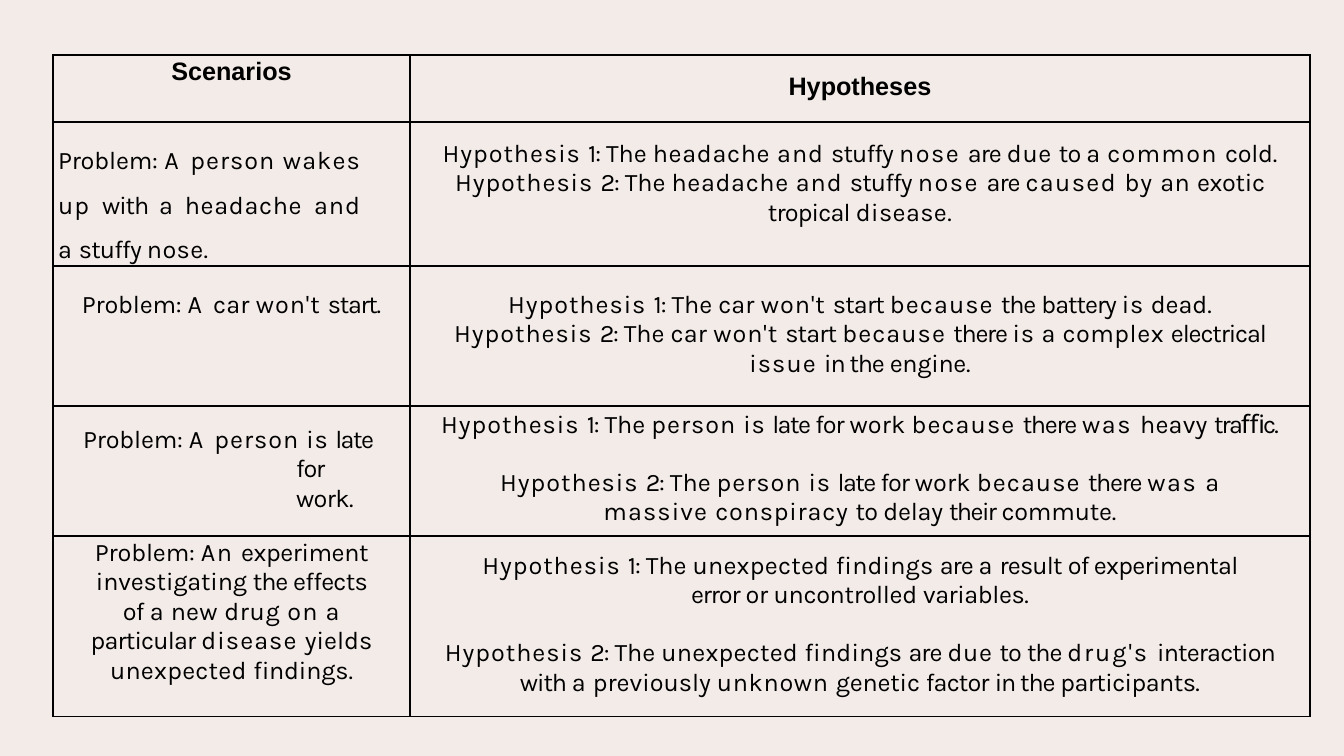
from itertools import groupby

from lxml.etree import SubElement
from pptx import Presentation
from pptx.dml.color import RGBColor
from pptx.enum.text import MSO_ANCHOR, PP_ALIGN as Align
from pptx.oxml.ns import qn
from pptx.util import Emu, Pt

BACKGROUND = RGBColor(0xF3, 0xEB, 0xE8)
BLACK = RGBColor(0, 0, 0)
EMU_PER_PX = 914400 / 100.8
SLIDE_SIZE = (1344, 756)
TABLE_ORIGIN = (53, 55)
COLUMN_WIDTHS = (357, 900)
ROW_HEIGHTS = (67, 144, 140, 130, 181)
HYPOTHESIS_GAP = 20.5

TRACKING_WORDS = {
    180: "A", 140: "drug's", 130: "", 120: "was", 110: "nose An",
    100: "caused", 90: "common",
    80: "wakes up because issue massive on disease",
    70: "person and Hypothesis by won't",
    60: "conspiracy", 50: "headache due is drug unknown",
    40: "a an complex", 30: "nose. disease.",
    20: "heavy new unexpected", 10: "car work findings",
    -10: "Problem: delay commute. investigating findings. genetic",
    -20: "cold. exotic engine. or uncontrolled", -30: "experiment variables.",
    -40: "work. participants.", -50: "effects of experimental",
    -60: "stuffy to tropical start particular result interaction factor",
    -70: "are battery", -80: "with 1: 2: the electrical in for error",
    -90: "start. there", -110: "late their", -130: "traﬃc.",
}
TRACKING = {word: amount for amount, words in TRACKING_WORDS.items()
            for word in words.split()}


def tracking(word):
    """Return the letter spacing of a word in hundredths of a point."""
    return TRACKING.get(word, 0)


class SlideBuilder:
    """Holds the slide style and draws its elements."""

    def __init__(self, presentation):
        """Start a blank slide in the presentation."""
        presentation.slide_width, presentation.slide_height = map(self.px, SLIDE_SIZE)
        self.slide = presentation.slides.add_slide(presentation.slide_layouts[6])
        self.slide.background.fill.solid()
        self.slide.background.fill.fore_color.rgb = BACKGROUND

    @staticmethod
    def px(length):
        """Turn px into EMU."""
        return Emu(round(length * EMU_PER_PX))

    def table(self, origin, widths, heights):
        """Add a plain table."""
        left, top, width, height = map(self.px, (*origin, sum(widths), sum(heights)))
        table = self.slide.shapes.add_table(
            len(heights), len(widths), left, top, width, height).table
        table.first_row = table.horz_banding = False
        for column, size in zip(table.columns, widths):
            column.width = self.px(size)
        for row, size in zip(table.rows, heights):
            row.height = self.px(size)
        return table

    def cell(self, cell, top, paragraphs):
        """Outline a cell and fill it with paragraphs."""
        cell.margin_left = cell.margin_right = cell.margin_bottom = 0
        cell.margin_top = self.px(top)
        cell.vertical_anchor = MSO_ANCHOR.TOP
        self.borders(cell)
        cell.fill.background()
        for index, options in enumerate(paragraphs):
            frame = cell.text_frame
            paragraph = frame.add_paragraph() if index else frame.paragraphs[0]
            self.paragraph(paragraph, **options)

    def borders(self, cell):
        """Draw a thin line on all four sides of a cell."""
        properties = cell._tc.get_or_add_tcPr()
        for side in ("a:lnL", "a:lnR", "a:lnT", "a:lnB"):
            line = SubElement(properties, qn(side), w=str(Pt(1)))
            fill = SubElement(line, qn("a:solidFill"))
            SubElement(fill, qn("a:srgbClr"), val=str(BLACK))

    def paragraph(self, paragraph, text, align=Align.CENTER, left=0, right=0,
                  indent=0, before=0, line=None, heading=False):
        """Write one paragraph, tracking its words unless it is a heading."""
        paragraph.alignment = align
        if before:
            paragraph.space_before = Pt(before)
        if line:
            paragraph.line_spacing = Pt(line)
        properties = paragraph._p.get_or_add_pPr()
        for name, value in (("marL", left), ("marR", right), ("indent", indent)):
            properties.set(name, str(self.px(value)))
        font = paragraph.font
        font.name = "Arial" if heading else "Karla"
        font.size = Pt(18)
        font.bold = heading
        font.color.rgb = BLACK
        if heading:
            paragraph.add_run().text = text
            return
        words = text.split()
        for amount, group in groupby(enumerate(words, 1), lambda item: tracking(item[1])):
            run = paragraph.add_run()
            run.text = "".join(
                word + (" " if number < len(words) else "") for number, word in group)
            run._r.get_or_add_rPr().set("spc", str(amount))


def centred(text, margin=0, before=0):
    """Describe a centred paragraph with equal side margins."""
    return dict(text=text, left=margin, right=margin, before=before)


ROWS = (
    ((3, [dict(text="Scenarios", heading=True)]),
     (18, [dict(text="Hypotheses", heading=True)])),
    ((9, [dict(text="Problem: A person wakes up with a headache and a stuffy nose.",
               align=Align.JUSTIFY, left=5, right=49, line=32)]),
     (17, [centred("Hypothesis 1: The headache and stuffy nose are due to a common cold."),
           centred("Hypothesis 2: The headache and stuffy nose are caused by an exotic "
                   "tropical disease.", 28)])),
    ((24, [centred("Problem: A car won't start.")]),
     (24, [centred("Hypothesis 1: The car won't start because the battery is dead."),
           centred("Hypothesis 2: The car won't start because there is a complex "
                   "electrical issue in the engine.", 10)])),
    ((19, [dict(text="Problem: A person is late for work.", align=Align.LEFT,
                left=243, right=33, indent=-213)]),
     (4, [centred("Hypothesis 1: The person is late for work because there was heavy traﬃc."),
          centred("Hypothesis 2: The person is late for work because there was a massive "
                  "conspiracy to delay their commute.", 84, HYPOTHESIS_GAP)])),
    ((2, [centred("Problem: An experiment investigating the effects of a new drug on a "
                  "particular disease yields unexpected findings.", 33)]),
     (15, [centred("Hypothesis 1: The unexpected findings are a result of experimental "
                   "error or uncontrolled variables.", 49),
           centred("Hypothesis 2: The unexpected findings are due to the drug's interaction "
                   "with a previously unknown genetic factor in the participants.",
                   16, HYPOTHESIS_GAP)])),
)


def main():
    """Build and save the slide."""
    presentation = Presentation()
    builder = SlideBuilder(presentation)
    table = builder.table(TABLE_ORIGIN, COLUMN_WIDTHS, ROW_HEIGHTS)
    for row, contents in zip(table.rows, ROWS):
        for cell, (top, paragraphs) in zip(row.cells, contents):
            builder.cell(cell, top, paragraphs)
    presentation.save("out.pptx")


if __name__ == "__main__":
    main()
